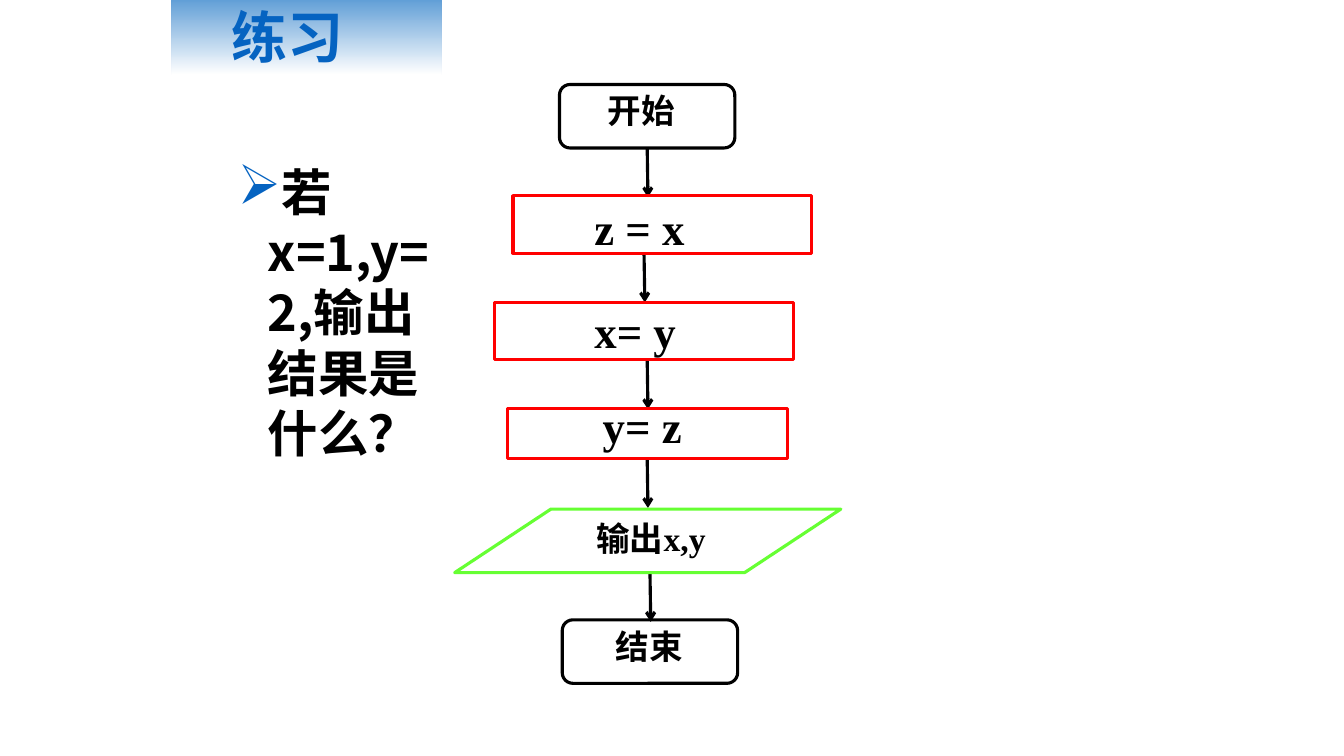
import pptx
import pptx.util
import pptx.dml.color
import pptx.enum.shapes
import pptx.enum.text
import pptx.oxml.ns
import lxml.etree

Cm, Pt = pptx.util.Cm, pptx.util.Pt
SHAPE = pptx.enum.shapes.MSO_SHAPE
ANCHOR = pptx.enum.text.MSO_ANCHOR
ALIGN = pptx.enum.text.PP_ALIGN
qn = pptx.oxml.ns.qn

# Content: lengths in cm
COLORS = {"blue": "0563C1", "band": "5B9BD5", "white": "FFFFFF", "black": "000000",
          "arrow": "010103", "red": "FF0000", "green": "66FF33"}
CJK, LATIN = "Noto Sans CJK SC", "Times New Roman"
TITLE = ("练习", (4.32, -0.08, 6.81, 1.96))
QUESTION = ("若x=1,y=2,输出结果是什么？", (5.74, 3.94, 5.59, 7.87))
KINDS = {  # preset, adjustment, line colour, text size
    "terminal": (SHAPE.ROUNDED_RECTANGLE, 0.167, "black", 24),
    "process": (SHAPE.RECTANGLE, None, "red", 32),
    "output": (SHAPE.PARALLELOGRAM, 1.515, "green", 24),
}
LABEL_H = 1.6
STEPS = [  # kind, outline box, label, label (left, top, width)
    ("terminal", (14.1, 2.13, 4.42, 1.6), "开始", (15.06, 2.13, 3.3)),
    ("process", (12.93, 4.93, 7.52, 1.45), "z = x", (14.73, 4.93, 3.15)),
    ("process", (12.47, 7.62, 7.52, 1.45), "x= y", (14.73, 7.52, 3.15)),
    ("process", (12.78, 10.29, 7.06, 1.27), "y= z", (14.94, 9.93, 3.15)),
    ("output", (11.46, 12.83, 9.73, 1.6), "输出x,y", (14.78, 12.93, 4.34)),
    ("terminal", (14.17, 15.62, 4.42, 1.6), "结束", (15.27, 15.65, 3.0)),
]
ARROW_X = [16.31, 16.23, 16.31, 16.31, 16.38]
ARROW_LEN = 1.24


def rgb(name):
    return pptx.dml.color.RGBColor.from_string(COLORS[name])


def add_child(parent, tag, **attrs):
    return lxml.etree.SubElement(parent, qn(tag), attrs)


def write(sp, text, size, font, color, align, anchor=ANCHOR.TOP):
    tf = sp.text_frame
    for key, value in {"word_wrap": True, "vertical_anchor": anchor}.items():
        setattr(tf, key, value)
    p = tf.paragraphs[0]
    p.alignment = align
    r = p.add_run()
    r.text = text
    for key, value in {"size": Pt(size), "name": font, "bold": True}.items():
        setattr(r.font, key, value)
    r.font.color.rgb = rgb(color)
    add_child(r.font._element, "a:ea", typeface=CJK)
    return p


prs = pptx.Presentation()
prs.slide_width, prs.slide_height = Cm(33.87), Cm(19.05)
s = prs.slides.add_slide(prs.slide_layouts[6])

# Title band, fading downwards
text, box = TITLE
sp = s.shapes.add_shape(SHAPE.RECTANGLE, *map(Cm, box))
sp.shadow.inherit = False
sp.line.fill.background()
sp.fill.gradient()
sp.fill.gradient_angle = 270
for stop, name, position in zip(sp.fill.gradient_stops, ("band", "white"), (0, 1)):
    stop.color.rgb = rgb(name)
    stop.position = position
p = write(sp, text, 40, CJK, "blue", ALIGN.LEFT, ANCHOR.MIDDLE)
p._p.get_or_add_pPr().set("marL", str(Cm(1.27)))

# Question with an arrowhead bullet
text, box = QUESTION
p = write(s.shapes.add_textbox(*map(Cm, box)), text, 36, CJK, "black", ALIGN.LEFT)
p.line_spacing = Pt(43)
pPr = p._p.get_or_add_pPr()
pPr.set("marL", str(Cm(0.76)))
pPr.set("indent", str(-Cm(0.76)))
add_child(add_child(pPr, "a:buClr"), "a:srgbClr", val=COLORS["blue"])
add_child(pPr, "a:buSzPct", val="110000")
add_child(pPr, "a:buChar", char="➢")

# Arrows, each starting at the foot of its step
for x, (kind, (left, top, width, height), label, place) in zip(ARROW_X, STEPS):
    y = top + height
    line = s.shapes.add_connector(pptx.enum.shapes.MSO_CONNECTOR.STRAIGHT,
                                  Cm(x), Cm(y), Cm(x + 0.02), Cm(y + ARROW_LEN))
    line.line.color.rgb = rgb("arrow")
    line.line.width = Pt(2.25)
    add_child(line.line._get_or_add_ln(), "a:tailEnd", type="arrow")
    add_child(line._element.spPr, "a:effectLst")

# Flowchart steps and their labels
for kind, box, label, place in STEPS:
    preset, adjustment, color, size = KINDS[kind]
    sp = s.shapes.add_shape(preset, *map(Cm, box))
    sp.shadow.inherit = False
    sp.fill.background()
    sp.line.color.rgb = rgb(color)
    sp.line.width = Pt(2.25)
    if adjustment is not None:
        sp.adjustments[0] = adjustment
    tb = s.shapes.add_textbox(*map(Cm, (*place, LABEL_H)))
    write(tb, label, size, LATIN, "black", ALIGN.JUSTIFY)

prs.save("out.pptx")
